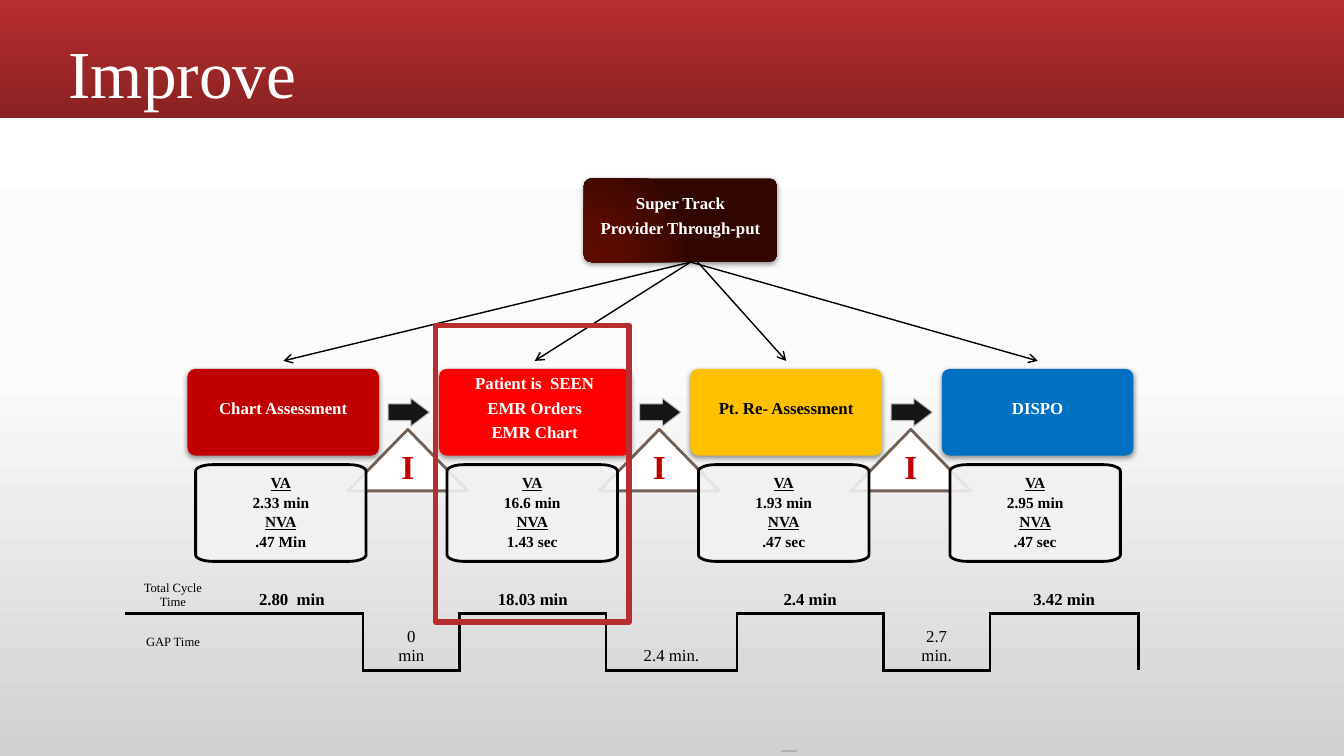
from dataclasses import dataclass
from math import cos, pi, sin

from lxml.etree import SubElement, fromstring
from pptx import Presentation
from pptx.dml.color import RGBColor
from pptx.enum.shapes import MSO_CONNECTOR, MSO_SHAPE
from pptx.enum.text import MSO_ANCHOR, MSO_AUTO_SIZE, PP_ALIGN
from pptx.oxml.ns import nsdecls, qn
from pptx.util import Inches, Pt


@dataclass(frozen=True)
class Theme:
    font: str = "Times New Roman"
    title: int = 48
    mark: int = 24
    label: int = 12
    data: int = 11
    note: int = 9
    black: str = "000000"
    white: str = "FFFFFF"
    accent: str = "B82D2F"
    crimson: str = "C00000"
    arrow: str = "161617"
    arrow_edge: str = "BFBFBF"
    triangle_edge: str = "726056"
    data_fill: str = "F2F2F2"
    tick: str = "B2B2B2"
    page: tuple = ((0, "FFFFFF"), (50, "FBFBFB"), (100, "D1D1D1"))
    header: tuple = ((0, "B82D2F"), (100, "8A2223"))
    root: tuple = ((0, "5E0B00"), (30, "5B0B00"), (75, "440800"), (100, "320600"))


THEME = Theme()
WIDTH, HEIGHT = 13.33, 7.5
STEP = 2.494  # distance between process columns
CARD_LEFT, CARD_TOP = 1.86, 3.66
DOWN = '<a:lin ang="5400000" scaled="0"/>'
GLOW = ('<a:path path="circle"><a:fillToRect l="5000" t="100000" '
        'r="120000" b="10000"/></a:path>')

STAGES = [
    (["Chart Assessment"], "C00000", "FFFFFF", "2.33 min", ".47 Min"),
    (["Patient is  SEEN", "EMR Orders", "EMR Chart"], "FF0000", "FFFFFF", "16.6 min", "1.43 sec"),
    (["Pt. Re- Assessment"], "FFC000", "000000", "1.93 min", ".47 sec"),
    (["DISPO"], "0070C0", "FFFFFF", "2.95 min", ".47 sec"),
]
TIMELINE = [
    ["Total Cycle Time", "2.80  min", "", "18.03 min", "", "2.4 min", "", "3.42 min"],
    ["GAP Time", "", "0\nmin", "", "2.4 min.", "", "2.7\nmin.", ""],
]
TIMELINE_WIDTHS = [0.95, 1.41, 0.96, 1.45, 1.3, 1.45, 1.06, 1.47]
TIMELINE_HEIGHTS = [0.52, 0.56]


def color(code):
    return RGBColor.from_string(code)


def write(frame, lines, *, size, ink=THEME.black, bold=False, underlined=(),
          align=PP_ALIGN.CENTER, anchor=MSO_ANCHOR.MIDDLE, spacing=None, after=0, insets=None):
    """Fill a text frame, one paragraph a line; underlined lists line numbers."""
    frame.word_wrap = True
    frame.vertical_anchor = anchor
    if insets:
        (frame.margin_left, frame.margin_top,
         frame.margin_right, frame.margin_bottom) = map(Inches, insets)
    for number, line in enumerate(lines):
        para = frame.add_paragraph() if number else frame.paragraphs[0]
        para.alignment = align
        para.line_spacing = spacing
        para.space_before, para.space_after = Pt(0), Pt(after)
        span = para.add_run()
        span.text = line
        span.font.name, span.font.size = THEME.font, Pt(size)
        span.font.bold, span.font.underline = bold, number in underlined
        span.font.color.rgb = color(ink)


def paint(shape, fill=None, line=None, weight=1):
    shape.shadow.inherit = False
    if fill:
        shape.fill.solid()
        shape.fill.fore_color.rgb = color(fill)
    else:
        shape.fill.background()
    if line:
        shape.line.color.rgb = color(line)
        shape.line.width = Pt(weight)
    else:
        shape.line.fill.background()


def add_preset(slide, kind, at, **look):
    shape = slide.shapes.add_shape(kind, *map(Inches, at))
    paint(shape, **look)
    return shape


def set_gradient(parent, stops, direction):
    """Put a gradient in place of the solid fill held by an element."""
    marks = "".join(f'<a:gs pos="{place * 1000}"><a:srgbClr val="{code}"/></a:gs>'
                    for place, code in stops)
    gradient = fromstring(f'<a:gradFill {nsdecls("a")} rotWithShape="1">'
                          f'<a:gsLst>{marks}</a:gsLst>{direction}</a:gradFill>')
    parent.replace(parent.find(qn("a:solidFill")), gradient)


def add_card(slide, at, lines, fill, ink):
    card = add_preset(slide, MSO_SHAPE.ROUNDED_RECTANGLE, at, fill=fill)
    card.adjustments[0] = 0.09
    shadow = SubElement(card.element.spPr.find(qn("a:effectLst")), qn("a:outerShdw"),
                        blurRad=str(Pt(4)), dist=str(Pt(1.6)), dir="5400000", rotWithShape="0")
    tint = SubElement(shadow, qn("a:srgbClr"), val=THEME.black)
    SubElement(tint, qn("a:alpha"), val="42000")
    write(card.text_frame, lines, size=THEME.label, ink=ink, bold=True, spacing=0.9,
          after=4.5, insets=(0.09, 0.09, 0.09, 0.16))
    return card


def add_data_box(slide, at, value_added, non_value_added):
    """Draw a box with flat elliptical corners and its two times."""
    left, top, width, height = at
    across, down, steps = 0.17, 0.065, 8
    corners = [(left + width - across, top + height - down), (left + across, top + height - down),
               (left + across, top + down), (left + width - across, top + down)]
    angles = [[(turn + step / steps) * pi / 2 for step in range(steps + 1)] for turn in range(4)]
    points = [(Inches(x + across * cos(angle)), Inches(y + down * sin(angle)))
              for (x, y), arc in zip(corners, angles) for angle in arc]
    builder = slide.shapes.build_freeform(*points[0])
    builder.add_line_segments(points[1:], close=True)
    box = builder.convert_to_shape()
    paint(box, THEME.data_fill, THEME.black, 2)
    tint = box.element.spPr.find(qn("a:solidFill"))[0]
    SubElement(tint, qn("a:alpha"), val="90000")
    write(box.text_frame, ["VA", value_added, "NVA", non_value_added], size=THEME.data, bold=True,
          underlined=(0, 2), spacing=0.9, after=2, insets=(0.1,) * 4)


def add_line(slide, start, end, ink, weight, arrow=False):
    line = slide.shapes.add_connector(MSO_CONNECTOR.STRAIGHT, *map(Inches, (*start, *end)))
    line.line.color.rgb = color(ink)
    line.line.width = Pt(weight)
    if arrow:
        SubElement(line.element.spPr.find(qn("a:ln")), qn("a:tailEnd"), type="arrow")
    SubElement(line.element.spPr, qn("a:effectLst"))


def cell_sides(row, column):
    """Name the bordered sides that make the stepped timeline."""
    gap = column in (2, 4, 6)
    if row == 0:
        return "" if gap else "B"
    if gap:
        return "LRB"
    return "T" + "R" * (column > 0) + "L" * (column > 1)


def set_borders(properties, sides):
    for place, side in enumerate("LRTB"):
        paint_xml = (f'<a:solidFill><a:srgbClr val="{THEME.black}"/></a:solidFill>'
                     if side in sides else "<a:noFill/>")
        properties.insert(place, fromstring(
            f'<a:ln{side} {nsdecls("a")} w="{Pt(2.25)}">{paint_xml}</a:ln{side}>'))


def add_timeline(slide, left, top):
    holder = slide.shapes.add_table(2, len(TIMELINE_WIDTHS), *map(Inches, (
        left, top, sum(TIMELINE_WIDTHS), sum(TIMELINE_HEIGHTS))))
    table = holder.table
    table.first_row = table.horz_banding = False
    for column, width in zip(table.columns, TIMELINE_WIDTHS):
        column.width = Inches(width)
    for row, (texts, height) in enumerate(zip(TIMELINE, TIMELINE_HEIGHTS)):
        table.rows[row].height = Inches(height)
        for column, text in enumerate(texts):
            cell = table.cell(row, column)
            cell.fill.background()
            cell.vertical_anchor = MSO_ANCHOR.MIDDLE if row and not column else MSO_ANCHOR.BOTTOM
            if text:
                write(cell.text_frame, text.split("\n"), bold=row == 0 and column > 0,
                      size=THEME.label if column else THEME.note, anchor=None)
    for number, properties in enumerate(holder.element.iter(qn("a:tcPr"))):
        set_borders(properties, cell_sides(*divmod(number, len(TIMELINE_WIDTHS))))


def add_header(slide, text):
    slide.background.fill.solid()
    set_gradient(slide.element.find(".//" + qn("p:bgPr")), THEME.page, DOWN)
    band = add_preset(slide, MSO_SHAPE.RECTANGLE, (0, 0, WIDTH, 1.17), fill=THEME.accent)
    set_gradient(band.element.spPr, THEME.header, DOWN)
    title = slide.shapes.title
    title.element.addprevious(band.element)
    title.left, title.top, title.width, title.height = map(Inches, (0.58, 0.11, 11.58, 1.06))
    write(title.text_frame, [text], size=THEME.title, ink=THEME.white, spacing=0.9,
          align=PP_ALIGN.LEFT, anchor=MSO_ANCHOR.BOTTOM)
    title.text_frame.auto_size = MSO_AUTO_SIZE.NONE


def main():
    deck = Presentation()
    deck.slide_width, deck.slide_height = Inches(WIDTH), Inches(HEIGHT)
    slide = deck.slides.add_slide(deck.slide_layouts[5])
    add_header(slide, "Improve")
    add_line(slide, (7.9, 7.45), (7.75, 7.45), THEME.tick, 1.75)
    lefts = [CARD_LEFT + STEP * number for number in range(len(STAGES))]
    for left in lefts[:-1]:
        triangle = add_preset(slide, MSO_SHAPE.ISOSCELES_TRIANGLE, (left + 1.59, 4.26, 1.19, 0.61),
                              fill=THEME.white, line=THEME.triangle_edge, weight=2)
        write(triangle.text_frame, ["I"], size=THEME.mark, ink=THEME.crimson, bold=True,
              anchor=MSO_ANCHOR.BOTTOM)
    for left, (lines, fill, ink, value_added, non_value_added) in zip(lefts, STAGES):
        add_card(slide, (left, CARD_TOP, 1.9, 0.86), lines, fill, ink)
        add_data_box(slide, (left + 0.08, 4.61, 1.69, 0.96), value_added, non_value_added)
    for left in lefts[:-1]:
        arrow = add_preset(slide, MSO_SHAPE.RIGHT_ARROW, (left + 1.99, 3.95, 0.41, 0.28),
                           fill=THEME.arrow, line=THEME.arrow_edge, weight=0.75)
        arrow.adjustments[0], arrow.adjustments[1] = 0.6, 0.66
    root = add_card(slide, (5.79, 1.77, 1.92, 0.83), ["Super Track", "Provider Through-put"],
                    THEME.root[0][1], THEME.white)
    set_gradient(root.element.spPr, THEME.root, GLOW)
    for left, start in zip(lefts, (6.85, 6.85, 6.92, 6.85)):
        add_line(slide, (start, 2.6), (left + 0.95, 3.58), THEME.black, 1, arrow=True)
    add_timeline(slide, 1.24, 5.57)
    add_preset(slide, MSO_SHAPE.RECTANGLE, (4.32, 3.23, 1.92, 2.94), line=THEME.accent, weight=4)
    deck.save("out.pptx")


if __name__ == "__main__":
    main()
